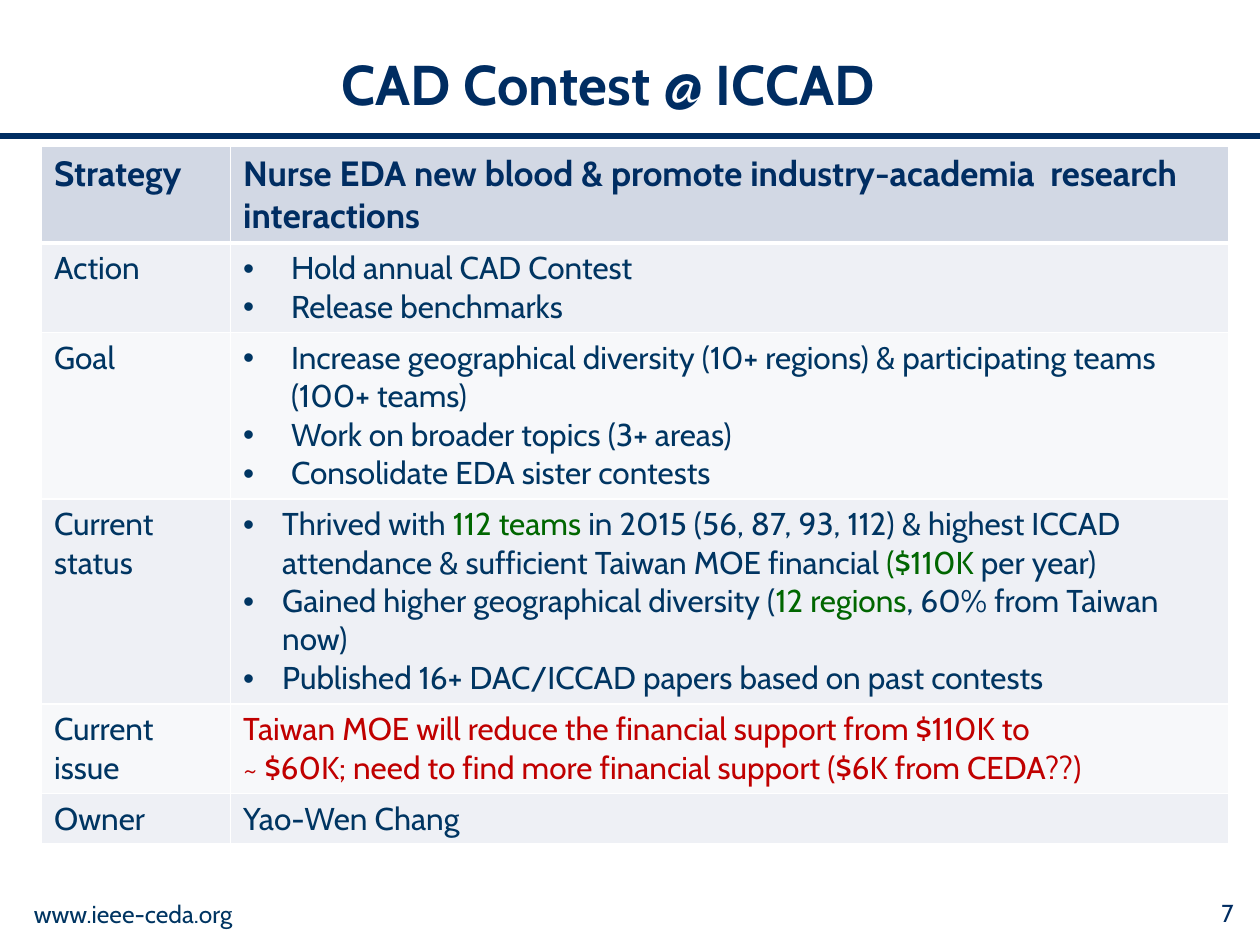
from lxml import etree
from pptx import Presentation
from pptx.dml.color import RGBColor
from pptx.enum import shapes, text
from pptx.oxml.ns import qn
from pptx.util import Inches, Pt

FONT = "Cabin"
NAVY, BLUE, GREEN, RED, WHITE = "002D62", "003562", "006600", "C00000", "FFFFFF"
HEAD, DARK, LIGHT = "D2D8E4", "EEF0F5", "F7F8FA"

# Each row: height, label, bullet indent (0 for none), paragraphs of (text, color) runs
ROWS = [
    (0.77, "Strategy", 0, [
        [("Nurse EDA new blood & promote industry-academia  research interactions", NAVY)]]),
    (0.71, "Action", 0.38, [
        [("Hold annual CAD Contest", BLUE)],
        [("Release benchmarks", BLUE)]]),
    (1.32, "Goal", 0.38, [
        [("Increase geographical diversity (10+ regions) & participating teams "
          "(100+ teams)", BLUE)],
        [("Work on broader topics (3+ areas)", BLUE)],
        [("Consolidate EDA sister contests", BLUE)]]),
    (1.63, "Current status", 0.31, [
        [("Thrived with ", BLUE), ("112 teams ", GREEN),
         ("in 2015 (56, 87, 93, 112) & highest ICCAD attendance & sufficient "
          "Taiwan MOE financial ", BLUE),
         ("($110K ", GREEN), ("per year)", BLUE)],
        [("Gained higher geographical diversity (", BLUE), ("12 regions", GREEN),
         (", 60% from Taiwan now)", BLUE)],
        [("Published 16+ DAC/ICCAD papers based on past contests", BLUE)]]),
    (0.71, "Current issue", 0, [
        [("Taiwan MOE will reduce the financial support from $110K to", RED)],
        [("~ $60K; need to find more financial support ($6K from CEDA??)", RED)]]),
    (0.4, "Owner", 0, [[("Yao-Wen Chang", BLUE)]]),
]


def rgb(value):
    return RGBColor.from_string(value)


def add_run(p, words, size, color, bold=False):
    r = p.add_run()
    r.text = words
    r.font.name, r.font.size, r.font.bold = FONT, Pt(size), bold
    r.font.color.rgb = rgb(color)


def add_bullet(p, indent):
    pPr = p._p.get_or_add_pPr()
    pPr.set("marL", str(Inches(indent)))
    pPr.set("indent", str(-Inches(indent)))
    etree.SubElement(pPr, qn("a:buFont")).set("typeface", "Arial")
    etree.SubElement(pPr, qn("a:buChar")).set("char", "•")


def add_label(slide, box, words, size, color, align, bold=False):
    tf = slide.shapes.add_textbox(*map(Inches, box)).text_frame
    tf.word_wrap = True
    tf.vertical_anchor = text.MSO_ANCHOR.MIDDLE
    p = tf.paragraphs[0]
    p.alignment = align
    add_run(p, words, size, color, bold)


def add_rule(slide, y):
    line = slide.shapes.add_connector(
        shapes.MSO_CONNECTOR.STRAIGHT, 0, Inches(y), Inches(10), Inches(y))
    line.line.color.rgb = rgb(NAVY)
    line.line.width = Pt(3)
    etree.SubElement(line._element.spPr, qn("a:effectLst"))


def style_cell(cell, fill, top, bottom):
    tcPr = cell._tc.get_or_add_tcPr()
    for side, width in (("L", 1), ("R", 1), ("T", top), ("B", bottom)):
        ln = etree.SubElement(tcPr, qn(f"a:ln{side}"), w=str(Pt(width)))
        solid = etree.SubElement(ln, qn("a:solidFill"))
        etree.SubElement(solid, qn("a:srgbClr"), val=WHITE)
    cell.fill.solid()
    cell.fill.fore_color.rgb = rgb(fill)


def fill_cell(cell, paragraphs, size, bold, indent=0):
    tf = cell.text_frame
    for i, runs in enumerate(paragraphs):
        p = tf.add_paragraph() if i else tf.paragraphs[0]
        if indent:
            add_bullet(p, indent)
        for words, color in runs:
            add_run(p, words, size, color, bold)


def add_plan_table(slide):
    height = sum(row[0] for row in ROWS)
    table = slide.shapes.add_table(
        len(ROWS), 2, Inches(0.33), Inches(1.16), Inches(9.42), Inches(height)).table
    table.columns[0].width = Inches(1.5)
    table.columns[1].width = Inches(7.92)
    for i, (row_height, label, indent, paragraphs) in enumerate(ROWS):
        table.rows[i].height = Inches(row_height)
        head = i == 0
        size, color = (20, NAVY) if head else (18, BLUE)
        fill = HEAD if head else (DARK if i % 2 else LIGHT)
        name, detail = table.cell(i, 0), table.cell(i, 1)
        for cell in (name, detail):
            style_cell(cell, fill, 3 if i == 1 else 1, 3 if head else 1)
        fill_cell(name, [[(label, color)]], size, head)
        fill_cell(detail, paragraphs, size, head, indent)


def main():
    prs = Presentation()
    prs.slide_width, prs.slide_height = Inches(10), Inches(7.5)
    slide = prs.slides.add_slide(prs.slide_layouts[6])

    # Title and rule
    add_rule(slide, 1.08)
    add_label(slide, (0.58, 0.16, 8.6, 1), "CAD Contest @ ICCAD ", 32, NAVY,
              text.PP_ALIGN.CENTER, bold=True)

    # Footer
    add_label(slide, (8.92, 7.08, 0.97, 0.33), "7", 14, NAVY, text.PP_ALIGN.RIGHT)
    add_label(slide, (0.17, 7.08, 2.33, 0.35), "www.ieee-ceda.org", 14, BLUE,
              text.PP_ALIGN.LEFT)

    # Contest plan
    add_plan_table(slide)
    prs.save("out.pptx")


if __name__ == "__main__":
    main()
